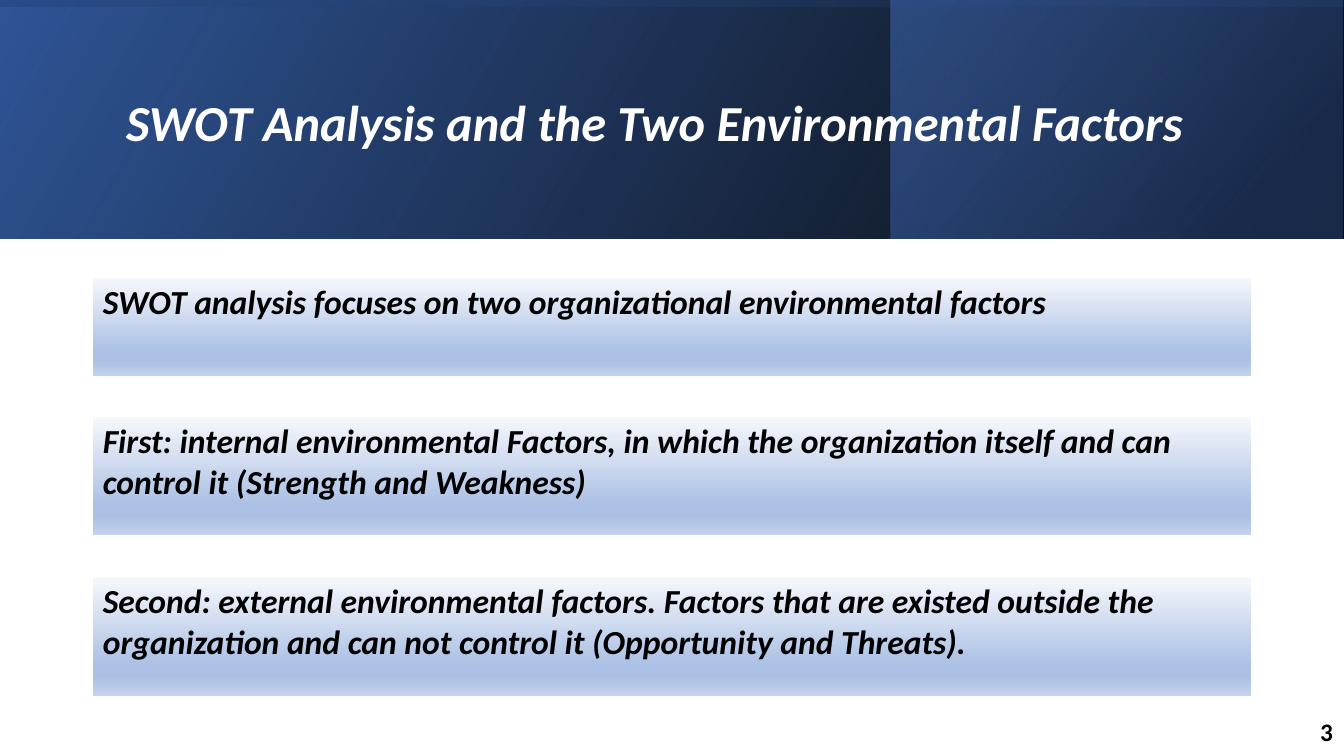
from lxml import etree
from pptx import Presentation
from pptx import util as u
from pptx.dml.color import RGBColor
from pptx.enum import shapes, text
from pptx.oxml import ns

PX = 9144
BLACK = RGBColor(0x00, 0x00, 0x00)
WHITE = RGBColor(0xFF, 0xFF, 0xFF)
NAVY = RGBColor(0x20, 0x38, 0x64)
DEEP_BLUE = RGBColor(0x2F, 0x55, 0x97)
BLUE = RGBColor(0x44, 0x72, 0xC4)
MIST = RGBColor(0xF6, 0xF8, 0xFC)
SKY = RGBColor(0xAB, 0xC0, 0xE4)
PALE_SKY = RGBColor(0xC7, 0xD5, 0xED)
FACTOR_STOPS = [(0, MIST, 100), (74, SKY, 100), (83, SKY, 100), (100, PALE_SKY, 100)]


def add_xml(parent, tag, **attributes):
    values = {key: str(value) for key, value in attributes.items()}
    return etree.SubElement(parent, ns.qn(tag), values)


def write(frame, words, size=24, color=BLACK, italic=True,
          align=text.PP_ALIGN.LEFT, line_spacing=1.0, space_after=0):
    frame.word_wrap = True
    paragraph = frame.paragraphs[0]
    paragraph.alignment = align
    paragraph.line_spacing = line_spacing
    paragraph.space_after = u.Pt(space_after)
    run = paragraph.add_run()
    run.text = words
    run.font.name = "Calibri"
    run.font.size = u.Pt(size)
    run.font.bold = True
    run.font.italic = italic
    run.font.color.rgb = color


class SlideBuilder:
    def __init__(self, deck):
        self.slide = deck.slides.add_slide(deck.slide_layouts[5])
        self.shapes = self.slide.shapes

    def gradient(self, fill, element, stops, angle):
        fill.gradient()
        grad = next(element.iter(ns.qn("a:gradFill")))
        grad.clear()
        grad.set("rotWithShape", "1")
        stop_list = add_xml(grad, "a:gsLst")
        for position, color, opacity in stops:
            stop = add_xml(stop_list, "a:gs", pos=position * 1000)
            tone = add_xml(stop, "a:srgbClr", val=color)
            if opacity < 100:
                add_xml(tone, "a:alpha", val=opacity * 1000)
        add_xml(grad, "a:lin", ang=angle * 60000, scaled=0)

    def banner(self, box, stops, angle, rotation=0):
        panel = self.shapes.add_shape(
            shapes.MSO_SHAPE.RECTANGLE, *(n * PX for n in box))
        panel.shadow.inherit = False
        panel.line.fill.background()
        panel.rotation = rotation
        panel.element.spPr.find(ns.qn("a:xfrm")).set("flipH", "1")
        self.gradient(panel.fill, panel.element, stops, angle)

    def title(self, box, words):
        heading = self.shapes.title
        heading.left, heading.top, heading.width, heading.height = (n * PX for n in box)
        self.shapes.element.append(heading.element)
        heading.text_frame.auto_size = text.MSO_AUTO_SIZE.NONE
        heading.text_frame.vertical_anchor = text.MSO_ANCHOR.MIDDLE
        write(heading.text_frame, words, size=36, color=WHITE, line_spacing=0.9)

    def page_number(self, box, words):
        number = self.shapes.add_textbox(*(n * PX for n in box)).text_frame
        number.vertical_anchor = text.MSO_ANCHOR.MIDDLE
        write(number, words, size=18, italic=False,
              align=text.PP_ALIGN.RIGHT, space_after=6)

    def factor(self, top, height, words):
        holder = self.shapes.add_table(1, 1, 92 * PX, top * PX, 1150 * PX, height * PX)
        cell = holder.table.cell(0, 0)
        write(cell.text_frame, words)
        self.gradient(cell.fill, holder.element, FACTOR_STOPS, 90)
        properties = next(holder.element.iter(ns.qn("a:tcPr")))
        borders = [("a:lnL", 1), ("a:lnR", 1), ("a:lnT", 1), ("a:lnB", 3)]
        for place, (side, width) in enumerate(borders):
            border = add_xml(properties, side, w=u.Pt(width))
            add_xml(add_xml(border, "a:solidFill"), "a:srgbClr", val=WHITE)
            properties.insert(place, border)


def main():
    deck = Presentation()
    deck.slide_width, deck.slide_height = u.Inches(13.333), u.Inches(7.5)
    page = SlideBuilder(deck)

    page.banner((0, 0, 1333, 237), [(0, BLACK, 96), (100, DEEP_BLUE, 100)], 330)
    page.banner((884, 0, 448, 237), [(19, NAVY, 68), (100, BLUE, 48)], 320)
    page.banner((548, -548, 237, 1333), [(23, DEEP_BLUE, 16), (99, BLACK, 45)], 350,
                rotation=270)

    page.title((115, 38, 1099, 172), "SWOT Analysis and the Two Environmental Factors")
    page.page_number((1294, 706, 38, 40), "3")

    factors = [
        (275, 100, "SWOT analysis focuses on two organizational environmental factors"),
        (413, 120, "First: internal environmental Factors, in which the organization "
                   "itself and can control it (Strength and Weakness)"),
        (572, 120, "Second: external environmental factors. Factors that are existed "
                   "outside the organization and can not control it "
                   "(Opportunity and Threats)."),
    ]
    for top, height, words in factors:
        page.factor(top, height, words)

    deck.save("out.pptx")


if __name__ == "__main__":
    main()
